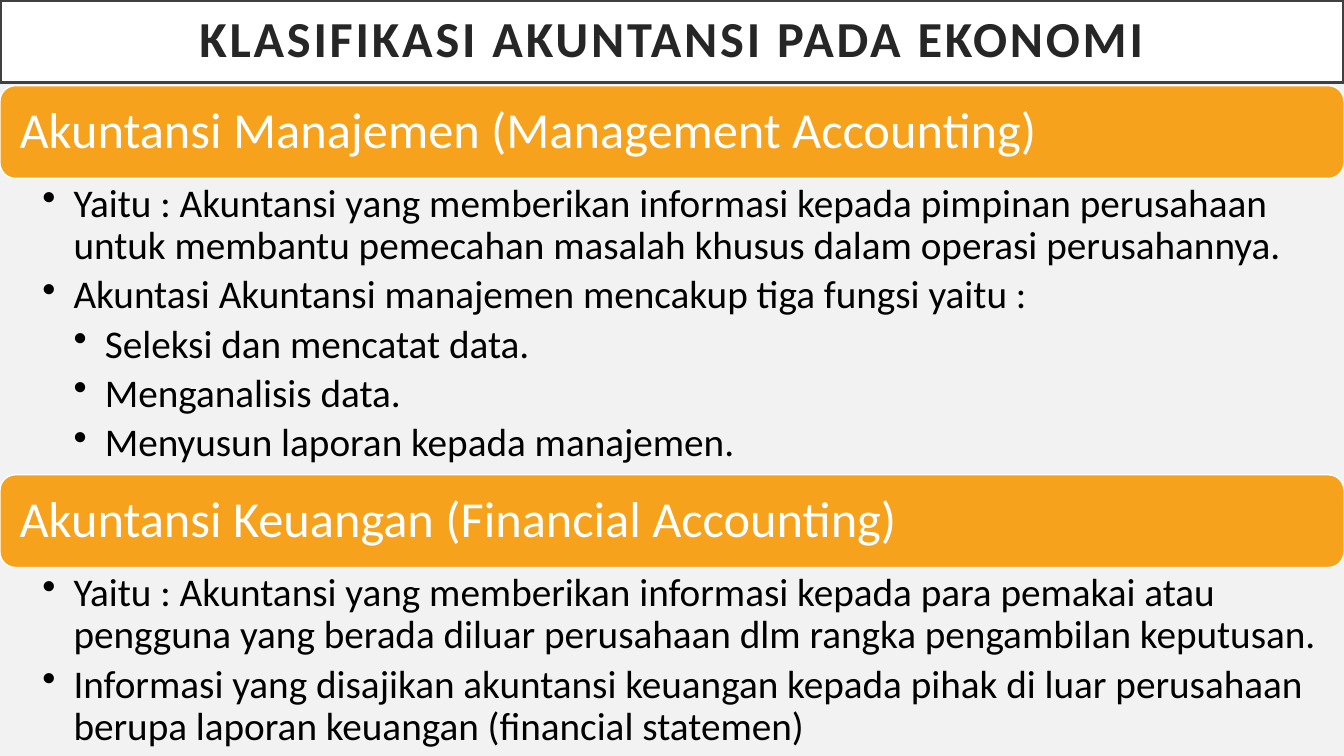
from dataclasses import dataclass

from lxml.etree import SubElement
from pptx import Presentation
from pptx.dml.color import RGBColor
from pptx.enum.shapes import MSO_SHAPE
from pptx.enum.text import MSO_ANCHOR, MSO_AUTO_SIZE, PP_ALIGN
from pptx.oxml.ns import qn
from pptx.slide import Slide
from pptx.text.text import TextFrame, _Paragraph
from pptx.util import Inches, Length, Pt

COLORS = {
    "background": "F2F2F2",
    "white": "FFFFFF",
    "title": "262626",
    "border": "404040",
    "banner": "F6A21D",
    "body": "000000",
}
FONT = "Calibri"
WIDTH, HEIGHT = Inches(13.33), Inches(7.5)
BULLET_INDENT = Inches(0.31)

# Heights as percentages of the slide height
TITLE_ROW = 10.93
FIRST_SECTION = 11.33
BANNER_ROW = 12.27


@dataclass(frozen=True)
class Bullet:
    text: str
    level: int = 1


@dataclass(frozen=True)
class Section:
    heading: str
    bullets: tuple[Bullet, ...]
    details_row: float


SECTIONS = (
    Section("Akuntansi Manajemen (Management Accounting)", (
        Bullet("Yaitu : Akuntansi yang memberikan informasi kepada pimpinan perusahaan "
               "untuk membantu pemecahan masalah khusus dalam operasi perusahannya."),
        Bullet("Akuntasi Akuntansi manajemen mencakup tiga fungsi yaitu :"),
        Bullet("Seleksi dan mencatat data.", 2),
        Bullet("Menganalisis data.", 2),
        Bullet("Menyusun laporan kepada manajemen.", 2),
    ), 39.2),
    Section("Akuntansi Keuangan (Financial Accounting)", (
        Bullet("Yaitu : Akuntansi yang memberikan informasi kepada para pemakai atau "
               "pengguna yang berada diluar perusahaan dlm rangka pengambilan keputusan."),
        Bullet("Informasi yang disajikan akuntansi keuangan kepada pihak di luar perusahaan "
               "berupa laporan keuangan (financial statemen)"),
    ), 24.4),
)


def rows(percent: float) -> Length:
    return Length(round(HEIGHT * percent / 100))


def color(name: str) -> RGBColor:
    return RGBColor.from_string(COLORS[name])


def set_frame(frame: TextFrame, left: float, right: float, vertical: float,
              anchor: MSO_ANCHOR) -> None:
    frame.word_wrap = True
    frame.auto_size = MSO_AUTO_SIZE.NONE
    frame.vertical_anchor = anchor
    frame.margin_left, frame.margin_right = Inches(left), Inches(right)
    frame.margin_top = frame.margin_bottom = Inches(vertical)


def style_paragraph(paragraph: _Paragraph, size: int, color_name: str,
                    align: PP_ALIGN = PP_ALIGN.LEFT) -> None:
    paragraph.alignment = align
    paragraph.line_spacing = 0.9
    paragraph.font.name = FONT
    paragraph.font.size = Pt(size)
    paragraph.font.color.rgb = color(color_name)


def add_title(slide: Slide, text: str) -> None:
    title = slide.shapes.title
    title.left, title.top, title.width, title.height = 0, 0, WIDTH, rows(TITLE_ROW)
    title.fill.solid()
    title.fill.fore_color.rgb = color("white")
    title.line.color.rgb = color("border")
    title.line.width = Pt(2.5)
    set_frame(title.text_frame, 0.2, 0.2, 0.2, MSO_ANCHOR.MIDDLE)
    paragraph = title.text_frame.paragraphs[0]
    run = paragraph.add_run()
    run.text = text
    style_paragraph(paragraph, 36, "title", PP_ALIGN.CENTER)
    paragraph.font.bold = True
    # Letter spacing in hundredths of a point
    run._r.get_or_add_rPr().set("spc", "200")


def add_banner(slide: Slide, top: float, heading: str) -> None:
    banner = slide.shapes.add_shape(
        MSO_SHAPE.ROUNDED_RECTANGLE, 0, rows(top), WIDTH, rows(BANNER_ROW))
    banner.shadow.inherit = False
    banner.fill.solid()
    banner.fill.fore_color.rgb = color("banner")
    banner.line.color.rgb = color("white")
    banner.line.width = Pt(1)
    set_frame(banner.text_frame, 0.15, 0.15, 0.15, MSO_ANCHOR.MIDDLE)
    paragraph = banner.text_frame.paragraphs[0]
    paragraph.text = heading
    style_paragraph(paragraph, 36, "white")


def add_details(slide: Slide, top: float, section: Section) -> None:
    box = slide.shapes.add_textbox(0, rows(top), WIDTH, rows(section.details_row))
    frame = box.text_frame
    set_frame(frame, 0.42, 0.28, 0.05, MSO_ANCHOR.TOP)
    for index, bullet in enumerate(section.bullets):
        paragraph = frame.add_paragraph() if index else frame.paragraphs[0]
        paragraph.text = bullet.text
        paragraph.level = bullet.level
        # Hanging bullet, one indent per level
        properties = paragraph._p.get_or_add_pPr()
        properties.set("marL", str(BULLET_INDENT * bullet.level))
        properties.set("indent", str(-BULLET_INDENT))
        SubElement(properties, qn("a:buChar")).set("char", "•")
        paragraph.space_after = Pt(5)
        style_paragraph(paragraph, 28, "body")


def main() -> None:
    presentation = Presentation()
    presentation.slide_width, presentation.slide_height = WIDTH, HEIGHT
    slide = presentation.slides.add_slide(presentation.slide_layouts.get_by_name("Title Only"))
    slide.background.fill.solid()
    slide.background.fill.fore_color.rgb = color("background")

    add_title(slide, "KLASIFIKASI AKUNTANSI PADA EKONOMI")

    # Sections stacked from the top down
    top = FIRST_SECTION
    for section in SECTIONS:
        add_banner(slide, top, section.heading)
        add_details(slide, top + BANNER_ROW, section)
        top += BANNER_ROW + section.details_row

    presentation.save("out.pptx")


if __name__ == "__main__":
    main()
